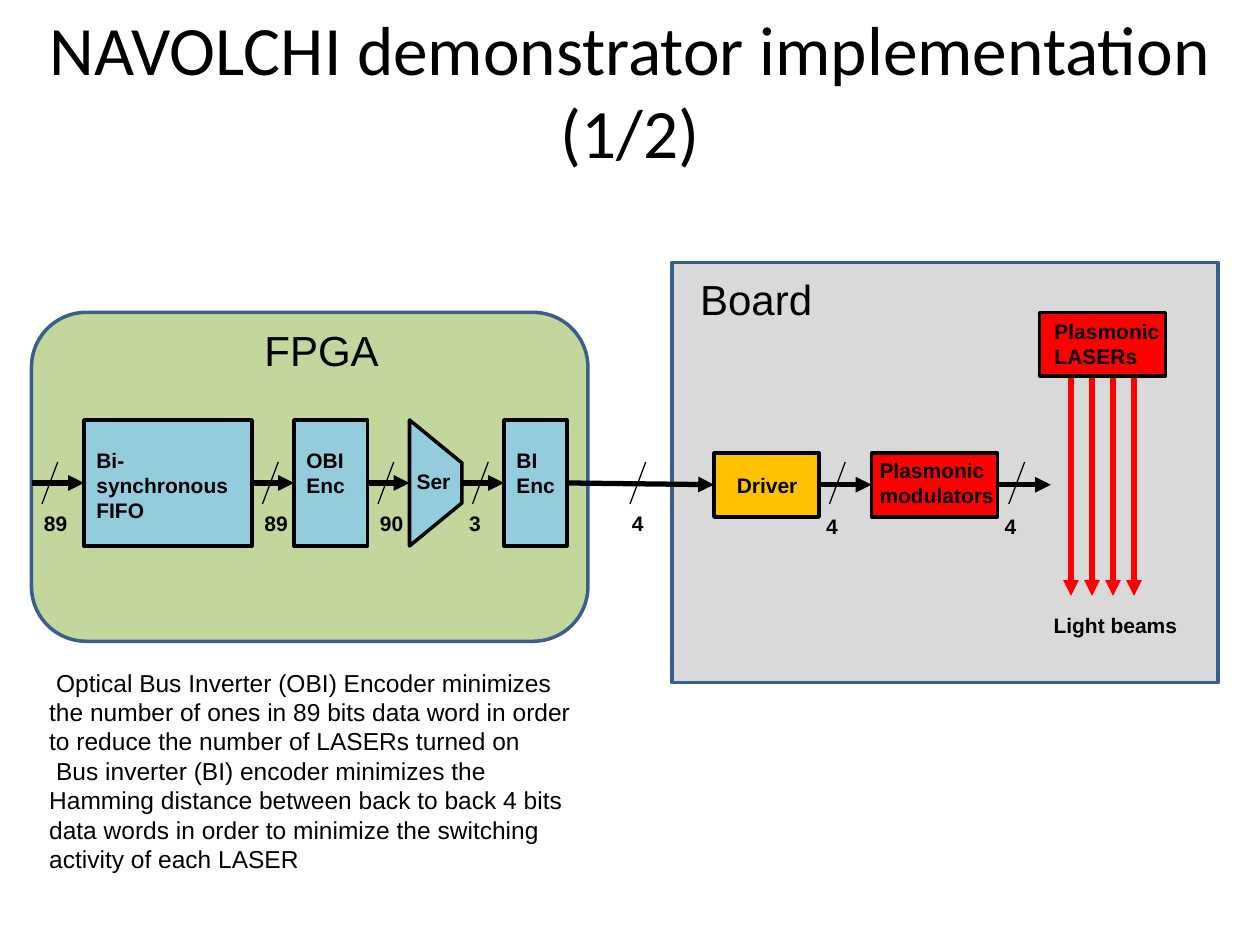
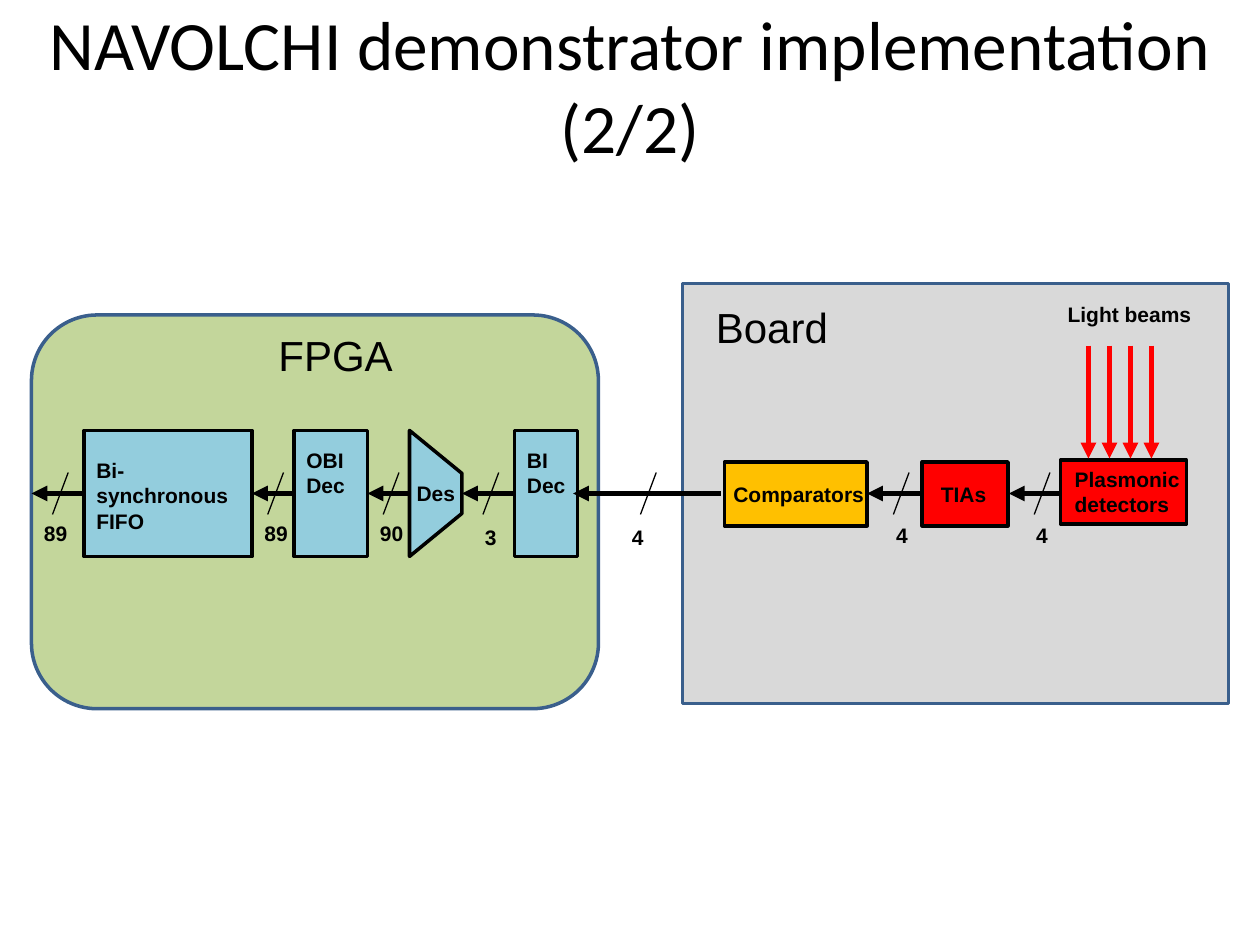
from pptx import Presentation
from pptx.dml.color import RGBColor
from pptx.enum.shapes import MSO_CONNECTOR, MSO_SHAPE
from pptx.enum.text import MSO_ANCHOR, MSO_AUTO_SIZE, PP_ALIGN
from pptx.oxml.ns import qn
from pptx.util import Pt
from lxml import etree

RECTANGLE = MSO_SHAPE.RECTANGLE
ROUNDED = MSO_SHAPE.ROUNDED_RECTANGLE
TRAPEZOID = MSO_SHAPE.TRAPEZOID
STRAIGHT = MSO_CONNECTOR.STRAIGHT
MIDDLE = MSO_ANCHOR.MIDDLE
CENTER = PP_ALIGN.CENTER
NO_AUTOFIT = MSO_AUTO_SIZE.NONE

BLACK = RGBColor(0x00, 0x00, 0x00)
GREEN = RGBColor(0xC3, 0xD6, 0x9B)
GRAY = RGBColor(0xD9, 0xD9, 0xD9)
NAVY = RGBColor(0x3A, 0x5F, 0x8C)
BLUE = RGBColor(0x93, 0xCD, 0xDD)
AMBER = RGBColor(0xFF, 0xC0, 0x00)
RED = RGBColor(0xFF, 0x00, 0x00)

TITLE_FONT = {"name": "Calibri", "size": Pt(39.6), "bold": False}
HEADING_FONT = {"name": "Arial", "size": Pt(24), "bold": False}
LABEL_FONT = {"name": "Arial", "size": Pt(12), "bold": True}
NOTE_FONT = {"name": "Arial", "size": Pt(14), "bold": False}

BLOCK_HEIGHT = 72
CHIP_HEIGHT = 36.5
BEAM_COUNT = 4
BEAM_PITCH = 12
TITLE_ONLY_LAYOUT = 5

NOTES = [
    "Optical Bus Inverter (OBI) Encoder minimizes the number of ones in 89 bits data word "
    "in order to reduce the number of LASERs turned on",
    "Bus inverter (BI) encoder minimizes the Hamming distance between back to back 4 bits "
    "data words in order to minimize the switching activity of each LASER",
]


class Deck:
    def __init__(self):
        self.presentation = Presentation()
        self.presentation.slide_width = Pt(720)
        self.presentation.slide_height = Pt(540)
        self.slide = None

    def format_paragraph(self, paragraph, font_values):
        for name, value in font_values.items():
            setattr(paragraph.font, name, value)
        paragraph.font.color.rgb = BLACK

    def new_slide(self, title, title_height):
        layout = self.presentation.slide_layouts[TITLE_ONLY_LAYOUT]
        self.slide = self.presentation.slides.add_slide(layout)
        shape = self.slide.shapes.title
        box = {"left": 0, "top": 0, "width": 720, "height": title_height}
        for name, value in box.items():
            setattr(shape, name, Pt(value))
        frame = shape.text_frame
        frame.text = title
        frame.auto_size = NO_AUTOFIT
        frame.vertical_anchor = MIDDLE
        frame.paragraphs[0].alignment = CENTER
        self.format_paragraph(frame.paragraphs[0], TITLE_FONT)

    def box(self, left, top, width, height, fill, line=BLACK, kind=RECTANGLE):
        shape = self.slide.shapes.add_shape(kind, Pt(left), Pt(top), Pt(width), Pt(height))
        shape.shadow.inherit = False
        shape.fill.solid()
        shape.fill.fore_color.rgb = fill
        shape.line.color.rgb = line
        shape.line.width = Pt(2)
        return shape

    def text(self, left, top, width, height, paragraphs, font=LABEL_FONT, wrap=True, indent=0):
        shape = self.slide.shapes.add_textbox(Pt(left), Pt(top), Pt(width), Pt(height))
        frame = shape.text_frame
        frame.word_wrap = wrap
        frame.text = "\n".join(paragraphs)
        for paragraph in frame.paragraphs:
            self.format_paragraph(paragraph, font)
            if indent:
                paragraph._p.get_or_add_pPr().set("indent", str(Pt(indent)))

    def line(self, start, end, color=BLACK, width=3, arrow=True):
        points = [Pt(value) for value in (*start, *end)]
        connector = self.slide.shapes.add_connector(STRAIGHT, *points)
        connector.line.color.rgb = color
        connector.line.width = Pt(width)
        properties = connector.element.spPr
        if arrow:
            outline = properties.find(qn("a:ln"))
            etree.SubElement(outline, qn("a:tailEnd"), type="triangle")
        etree.SubElement(properties, qn("a:effectLst"))

    def serializer(self, middle, label, label_top):
        length, depth = BLOCK_HEIGHT, 30
        shape = self.box(249 - length / 2, middle - depth / 2, length, depth, BLUE, kind=TRAPEZOID)
        shape.adjustments[0] = 0.82
        shape.rotation = 90
        self.text(231, label_top, 42, 20, [label])

    def bus(self, start, end, slash_left, slash_middle, bits, label_left, label_top):
        self.line(start, end)
        self.line((slash_left, slash_middle + 12), (slash_left + 9, slash_middle - 12),
                  width=0.75, arrow=False)
        self.text(label_left, label_top, 40, 20, [bits])

    def beams(self, left, top, bottom):
        for index in range(BEAM_COUNT):
            x = left + index * BEAM_PITCH
            self.line((x, top), (x, bottom), RED)

    def fpga(self, top, width, height, heading_left, heading_top):
        self.box(18, top, width, height, GREEN, NAVY, ROUNDED)
        self.text(heading_left, heading_top, 95, 33, ["FPGA"], HEADING_FONT)

    def board(self, left, top, heading_left, heading_top):
        self.box(left, top, 312, 240, GRAY, NAVY)
        self.text(heading_left, heading_top, 89, 33, ["Board"], HEADING_FONT)

    def fpga_blocks(self, middle, inverter_left, codec):
        top = middle - BLOCK_HEIGHT / 2
        for left, width, label, label_top, label_width in [
            (48, 96, "Bi-synchronous FIFO", top + 12, 95),
            (168, 42, f"OBI {codec}", 252, 42),
            (inverter_left, 36, f"BI {codec}", 252, 48),
        ]:
            self.box(left, top, width, BLOCK_HEIGHT, BLUE)
            self.text(left, label_top, label_width, 33, [label])

    def chip(self, left, top, width, fill, label, label_left, label_top, label_width, wrap=True):
        self.box(left, top, width, CHIP_HEIGHT, fill)
        self.text(label_left, label_top, label_width, 20, [label], wrap=wrap)


def build_transmitter(deck):
    deck.new_slide("NAVOLCHI demonstrator implementation (1/2)", 102)
    deck.fpga(178.5, 318, 188, 144, 182)
    deck.board(384, 150, 393, 152.5)
    middle, board_middle = 276, 277
    deck.fpga_blocks(middle, 288, "Enc")
    deck.serializer(middle, "Ser", 264)
    deck.beams(612, 214.5, 340.5)
    deck.text(595, 346.5, 86, 20, ["Light beams"], wrap=False)
    deck.chip(408, 259, 60, AMBER, "Driver", 414, 266.5, 50, wrap=False)
    deck.chip(498, 259, 72, RED, "Plasmonic modulators", 495.5, 258, 84)
    deck.chip(594, 178.5, 72, RED, "Plasmonic LASERs", 595.5, 178.5, 77)
    for start, end, slash_left, bits, label_left in [
        (18, 48, 24, "89", 18),
        (144, 168, 150, "89", 144),
        (210, 234, 216, "90", 210),
        (264, 288, 270, "3", 261),
    ]:
        deck.bus((start, middle), (end, middle), slash_left, middle, bits, label_left, 288)
    deck.bus((324, middle), (408, board_middle), 360, middle, "4", 354, 288)
    for start, slash_left, label_left in [(468, 474, 465), (570.5, 576.5, 567)]:
        deck.bus((start, board_middle), (start + 30, board_middle),
                 slash_left, middle, "4", label_left, 290)
    deck.text(21, 378, 315, 117, NOTES, NOTE_FONT, indent=4)


def build_receiver(deck):
    deck.new_slide("NAVOLCHI demonstrator implementation (2/2)", 96)
    deck.board(390, 162, 402, 169)
    deck.fpga(180, 324, 225, 152, 185)
    middle = 282
    deck.fpga_blocks(middle, 294, "Dec")
    deck.serializer(middle, "Des", 271)
    deck.chip(414, 264, 81.5, AMBER, "Comparators", 412, 271.5, 90, wrap=False)
    deck.chip(527, 264, 49, RED, "TIAs", 530.5, 271.5, 43)
    deck.chip(606, 263, 72, RED, "Plasmonic detectors", 607, 263, 77)
    deck.beams(622, 197.5, 262)
    deck.text(603, 169, 86, 20, ["Light beams"], wrap=False)
    for start, end, slash_left, bits, label_left, label_top in [
        (48, 18, 30, "89", 18, 294),
        (168, 144, 153, "89", 144, 294),
        (234, 210, 219, "90", 210, 294),
        (294, 264, 276, "3", 270, 296),
        (412, 327.5, 366, "4", 354, 296),
        (525.5, 495.5, 510.5, "4", 505, 295),
        (606.5, 576.5, 591, "4", 585, 295),
    ]:
        deck.bus((start, middle), (end, middle), slash_left, middle, bits, label_left, label_top)


def main():
    deck = Deck()
    build_transmitter(deck)
    build_receiver(deck)
    deck.presentation.save("out.pptx")


if __name__ == "__main__":
    main()
